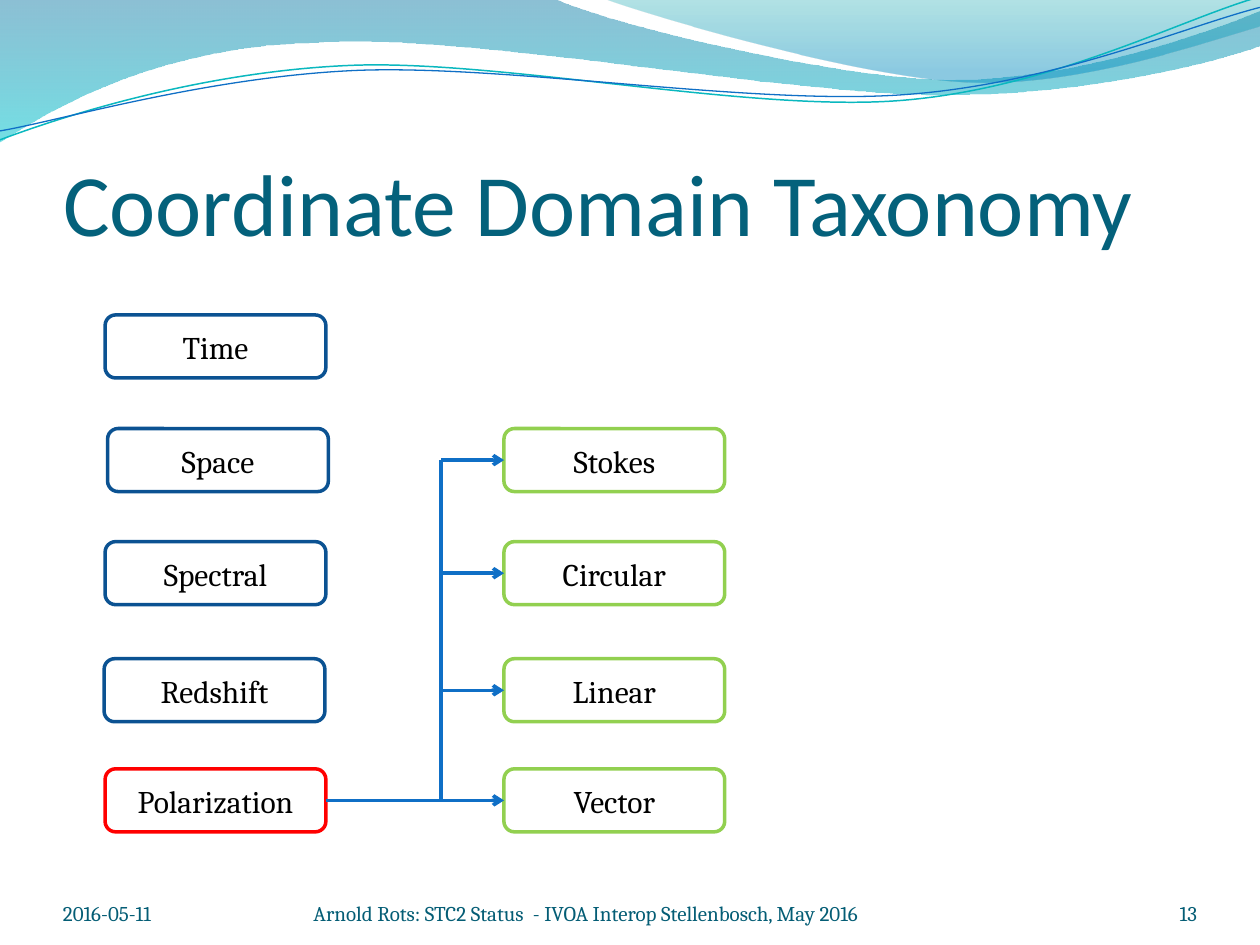
import pptx
import pptx.util
import pptx.dml.color
import pptx.enum.shapes
import pptx.enum.text
import pptx.oxml
import pptx.oxml.ns
from pptx.util import Cm

ALIGN = pptx.enum.text.PP_ALIGN
ANCHOR = pptx.enum.text.MSO_ANCHOR
FIT = pptx.enum.text.MSO_AUTO_SIZE
KIND = pptx.enum.shapes.MSO_SHAPE
SPACE = pptx.oxml.ns.nsdecls("a")

# Each band: start point, then segments of one point (line) or three (curve), in cm
BANDS = [
    ((0, 0), [
        [(11.18, -.02)],
        [(12.09, .43), (16.87, 1.6), (19.25, 1.6)],
        [(21.67, 1.6), (24.33, .66), (25.4, .23)],
        [(25.43, .91)],
        [(24.97, 1.12), (22.1, 1.93), (18.95, 1.91)],
        [(15.8, 1.91), (9.7, .71), (6.53, .86)],
        [(3.28, .91), (1.17, 2.11), (-.02, 2.87)],
    ], [(0, "0074A1", 45), (1, "00C6CF", 55)]),
    ((12.17, -.02), [
        [(12.93, .28), (17.32, 1.57), (19.53, 1.65)],
        [(21.74, 1.75), (24.41, .81), (25.4, .53)],
        [(25.4, 0)],
    ], [(0, "00A1A9", 30), (.8, "008BBF", 45)]),
]
STRANDS = [
    ((0, 2.82), [
        [(1.22, 2.36), (4.01, 1.45), (7.04, 1.32)],
        [(10.03, 1.19), (15.06, 2.26), (18.11, 2.03)],
        [(21.16, 1.8), (23.83, .38), (25.35, -.05)],
    ], "0AB8BF", .85),
    ((0, 2.64), [
        [(1.19, 2.44), (4.17, 1.55), (7.19, 1.42)],
        [(10.24, 1.3), (15.16, 2.13), (18.21, 1.91)],
        [(21.23, 1.7), (23.9, .53), (25.4, .15)],
    ], "0F6FC6", .75),
]
# Name, nudge from the column's left edge, top, outline
DOMAINS = [
    ("Time", 0, 0, "0B5292"),
    ("Space", .05, 2.29, "0B5292"),
    ("Spectral", 0, 4.57, "0B5292"),
    ("Redshift", -.02, 6.93, "0B5292"),
    ("Polarization", 0, 9.15, "FF0000"),
]
KINDS = ["Stokes", "Circular", "Linear", "Vector"]
WIDE, HIGH = 4.45, 1.27


def color(code):
    return pptx.dml.color.RGBColor.from_string(code)


def style(part, size, font, code, align):
    part.alignment = align
    for run in part.runs:
        run.font.size = pptx.util.Pt(size)
        run.font.name = font
        run.font.color.rgb = color(code)


def bend(shape, segs):
    """Join each three line points of a curved segment into one Bezier."""
    lines = iter(list(shape._element.iter(pptx.oxml.ns.qn("a:lnTo"))))
    for seg in segs:
        group = [next(lines) for _ in seg]
        if len(group) == 3:
            curve = pptx.oxml.parse_xml(f"<a:cubicBezTo {SPACE}/>")
            group[0].addprevious(curve)
            for line in group:
                curve.append(line[0])
                line.getparent().remove(line)


def outline(slide, x, y, start, segs, close):
    points = [(100 * (x + a), 100 * (y + b))
              for a, b in [start] + sum(segs, [])]
    form = slide.shapes.build_freeform(*points[0], scale=Cm(.01))
    form.add_line_segments(points[1:], close=close)
    shape = form.convert_to_shape()
    bend(shape, segs)
    shape.shadow.inherit = False
    return shape


def blend(fill, stops):
    """Fill from top to bottom with part-transparent colours."""
    fill.gradient()
    fill.gradient_angle = 270
    for stop, (place, code, alpha) in zip(fill.gradient_stops, stops):
        stop.position = place
        stop.color.rgb = color(code)
    tags = fill._xPr.iter(pptx.oxml.ns.qn("a:srgbClr"))
    for tag, (place, code, alpha) in zip(list(tags), stops):
        tag.append(pptx.oxml.parse_xml(
            f'<a:alpha {SPACE} val="{alpha * 1000}"/>'))


def waves(slide, x, y):
    for start, segs, stops in BANDS:
        band = outline(slide, x, y, start, segs, True)
        blend(band.fill, stops)
        band.line.fill.background()
    for start, segs, code, width in STRANDS:
        strand = outline(slide, x, y, start, segs, False)
        strand.fill.background()
        strand.line.color.rgb = color(code)
        strand.line.width = pptx.util.Pt(width)


def heading(slide, x, y, w, h):
    title = slide.shapes.title
    title.left, title.top, title.width, title.height = map(Cm, (x, y, w, h))
    frame = title.text_frame
    frame.text = "Coordinate Domain Taxonomy"
    frame.auto_size = FIT.NONE
    frame.vertical_anchor = ANCHOR.BOTTOM
    frame.margin_left = frame.margin_right = frame.margin_bottom = 0
    style(frame.paragraphs[0], 50, "Calibri", "04617B", ALIGN.LEFT)


def write(slide, x, y, w, h, text):
    """Add a wrapping text box and return its frame."""
    frame = slide.shapes.add_textbox(Cm(x), Cm(y), Cm(w), Cm(h)).text_frame
    frame.text = text
    frame.word_wrap = True
    return frame


def node(slide, x, y, name, code):
    box = slide.shapes.add_shape(KIND.ROUNDED_RECTANGLE, Cm(x), Cm(y), Cm(WIDE), Cm(HIGH))
    box.shadow.inherit = False
    box.fill.background()
    box.line.color.rgb = color(code)
    box.line.width = pptx.util.Pt(2)
    frame = write(slide, x + .22, y + .14, WIDE - .44, 1.02, name)
    frame.auto_size = FIT.SHAPE_TO_FIT_TEXT
    style(frame.paragraphs[0], 18, "Cambria", "000000", ALIGN.CENTER)


def link(slide, x1, y1, x2, y2, arrow=True):
    line = slide.shapes.add_connector(
        pptx.enum.shapes.MSO_CONNECTOR.STRAIGHT, Cm(x1), Cm(y1), Cm(x2), Cm(y2))
    line.line.color.rgb = color("0F6FC6")
    line.line.width = pptx.util.Pt(2)
    if arrow:
        head = pptx.oxml.parse_xml(f'<a:tailEnd {SPACE} type="arrow"/>')
        line.line._get_or_add_ln().append(head)
    line._element.spPr.append(pptx.oxml.parse_xml(f"<a:effectLst {SPACE}/>"))


def tree(slide, x, y):
    """Domains on the left, the kinds of the last domain on the right."""
    right, stem = x + 8.04, x + 6.77
    for name, nudge, top, code in DOMAINS:
        node(slide, x + nudge, y + top, name, code)
    tops = [y + row[2] for row in DOMAINS[1:]]
    for name, top in zip(KINDS, tops):
        node(slide, right, top, name, "92D050")
    mids = [top + HIGH / 2 for top in tops]
    link(slide, x + WIDE, mids[-1], right, mids[-1])
    link(slide, stem, mids[0], stem, mids[-1], arrow=False)
    for mid in mids[:-1]:
        link(slide, stem, mid, right, mid)


def footer(slide, x, y, h):
    for left, w, text, align in [
        (0, 4.65, "2016-05-11", ALIGN.LEFT),
        (5.05, 12.3, "Arnold Rots: STC2 Status  - IVOA Interop Stellenbosch, May 2016",
         ALIGN.LEFT),
        (20.75, 2.11, "13", ALIGN.RIGHT),
    ]:
        frame = write(slide, x + left, y, w, h, text)
        frame.vertical_anchor = ANCHOR.BOTTOM
        frame.margin_left = frame.margin_right = 0
        frame.margin_top = frame.margin_bottom = 0
        style(frame.paragraphs[0], 12, "Cambria", "045D75", align)


def main():
    deck = pptx.Presentation()
    deck.slide_width, deck.slide_height = Cm(25.4), Cm(19.05)
    slide = deck.slides.add_slide(deck.slide_layouts[5])
    waves(slide, 0, 0)
    heading(slide, 1.27, 1.95, 23.06, 3.18)
    tree(slide, 2.12, 6.35)
    footer(slide, 1.27, 17.65, 1.02)
    deck.save("out.pptx")


if __name__ == "__main__":
    main()
